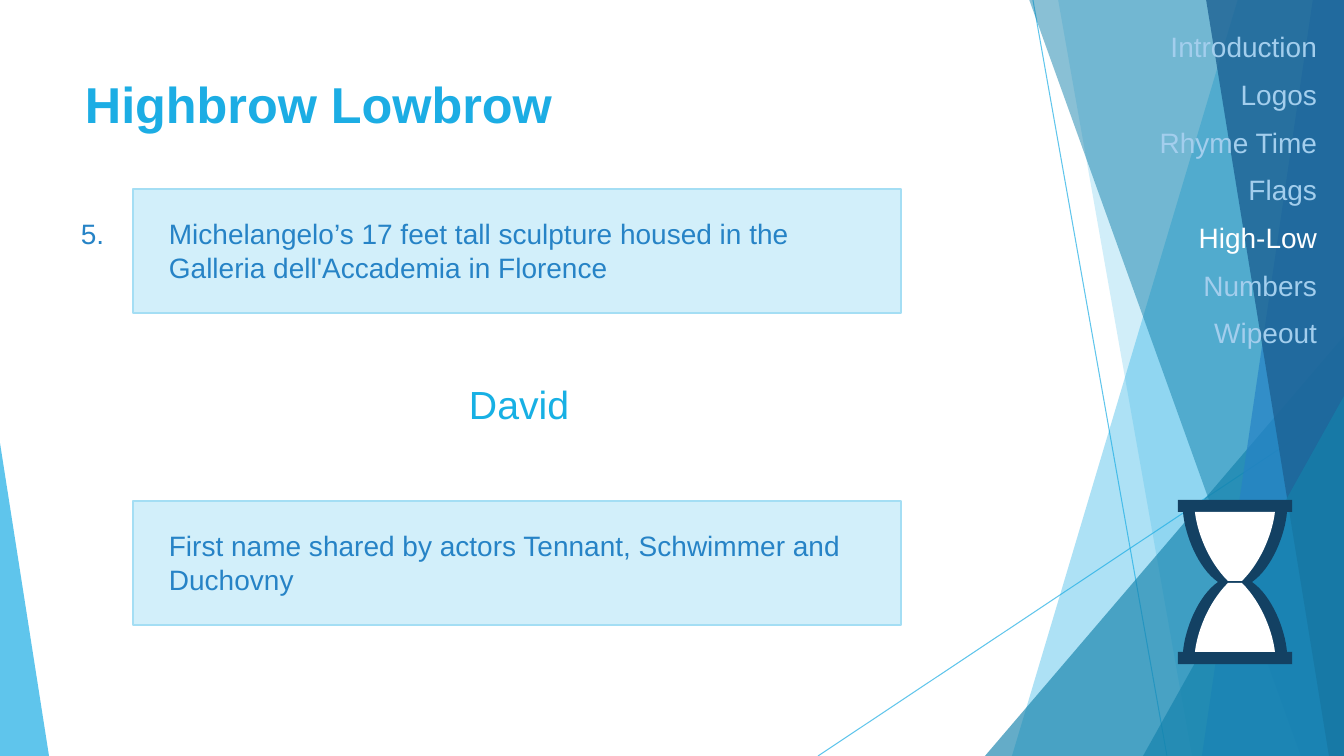
"""Build the Highbrow Lowbrow quiz slide with its round menu and hourglass."""
from lxml import etree
from pptx import Presentation
from pptx.dml.color import RGBColor
from pptx.enum.shapes import MSO_CONNECTOR, MSO_SHAPE as SHAPE
from pptx.enum.text import MSO_ANCHOR as ANCHOR, PP_ALIGN as ALIGN
from pptx.oxml.ns import qn
from pptx.util import Emu, Pt

WIDTH, HEIGHT = 1344, 756
SCALE = 914400 / 100.8
SKY, BLUE, TEAL, NAVY = "1CADE4", "2683C6", "1482AC", "134163"

TITLE = "Highbrow Lowbrow"
NUMBER = "5."
CLUES = [
    (189, "Michelangelo’s 17 feet tall sculpture housed in the Galleria dell'Accademia in Florence"),
    (501, "First name shared by actors Tennant, Schwimmer and Duchovny"),
]
ANSWER = "David"
ROUNDS = ["Introduction", "Logos", "Rhyme Time", "Flags", "High-Low", "Numbers", "Wipeout"]
CURRENT_ROUND = "High-Low"

RAYS = [((1033, 0), (1167, HEIGHT)), ((WIDTH, 406), (818, HEIGHT))]
# kind, geometry, colour, opacity
FACETS = [
    ("band", (1238, 1012), SKY, 36),
    ("band", (1058, 1192), SKY, 20),
    ("triangle", (985, 336, 359, 420, 1), TEAL, 66),
    ("band", (1029, 1301), TEAL, 50),
    ("band", (1313, 1202), BLUE, 70),
    ("band", (1206, 1329), "1D6294", 80),
    ("triangle", (1143, 396, 201, 360, 1), TEAL, 66),
    ("triangle", (0, 443, 49, 313, 0), SKY, 70),
]

HOURGLASS_CENTRE = (1235, 582)
CAP = [(-57, -82), (-57, -70)]
FRAME_CURVE = [(-52, -70), (-50, -47), (-37, -14), (-17, 0)]
GLASS_CURVE = [(-40, -70), (-38, -52), (-28, -22), (-7, -1)]


def px(length):
    return Emu(round(length * SCALE))


def colour(fill_owner, value, opacity=100):
    fill_owner.solid()
    fill_owner.fore_color.rgb = RGBColor.from_string(value)
    if opacity < 100:
        rgb = fill_owner._xPr.find(qn("a:solidFill")).find(qn("a:srgbClr"))
        etree.SubElement(rgb, qn("a:alpha")).set("val", str(opacity * 1000))


def paint(shape, fill, opacity=100, line=None):
    shape.shadow.inherit = False
    colour(shape.fill, fill, opacity)
    if line:
        colour(shape.line.fill, line)
        shape.line.width = Pt(1.5)
    else:
        shape.line.fill.background()


def outline(slide, contours, fill, opacity=100):
    scaled = [[(px(x), px(y)) for x, y in contour] for contour in contours]
    builder = slide.shapes.build_freeform(*scaled[0][0], scale=1.0)
    for index, contour in enumerate(scaled):
        if index:
            builder.move_to(*contour[0])
        builder.add_line_segments(contour[1:], close=True)
    paint(builder.convert_to_shape(), fill, opacity)


def add_text(slide, box, lines, size=20, hue=BLUE, bold=False, align=ALIGN.LEFT,
             anchor=ANCHOR.TOP, wrap=True, gap=0, highlight=None):
    frame = slide.shapes.add_textbox(*map(px, box)).text_frame
    frame.word_wrap = wrap
    frame.vertical_anchor = anchor
    for index, line in enumerate(lines):
        paragraph = frame.paragraphs[0] if index == 0 else frame.add_paragraph()
        paragraph.alignment = align
        if index:
            paragraph.space_before = Pt(gap)
        run = paragraph.add_run()
        run.text = line
        run.font.name, run.font.size, run.font.bold = "Arial", Pt(size), bold
        run.font.color.rgb = RGBColor.from_string("FFFFFF" if line == highlight else hue)


def add_ray(slide, start, end):
    ray = slide.shapes.add_connector(MSO_CONNECTOR.STRAIGHT, *map(px, start + end))
    ray.line.width = Pt(0.75)
    colour(ray.line.fill, SKY, 70)
    etree.SubElement(ray._element.spPr, qn("a:effectLst"))


def add_facet(slide, kind, geometry, fill, opacity):
    if kind == "band":
        top, bottom = geometry
        corners = [(top, -1), (WIDTH, -1), (WIDTH, HEIGHT), (bottom, HEIGHT)]
        outline(slide, [corners], fill, opacity)
    else:
        *box, apex = geometry
        triangle = slide.shapes.add_shape(SHAPE.ISOSCELES_TRIANGLE, *map(px, box))
        triangle.adjustments[0] = apex
        paint(triangle, fill, opacity)


def bezier(points, steps=16):
    weights = (1, 3, 3, 1)
    return [
        tuple(sum(w * (1 - t) ** (3 - k) * t ** k * point[axis]
                  for k, (w, point) in enumerate(zip(weights, points))) for axis in (0, 1))
        for t in (step / steps for step in range(steps + 1))
    ]


def mirror(points, across, down):
    return [(x * across, y * down) for x, y in points]


def add_hourglass(slide):
    def place(points):
        return [(HOURGLASS_CENTRE[0] + x, HOURGLASS_CENTRE[1] + y) for x, y in points]

    side = CAP + bezier(FRAME_CURVE)
    left = side + mirror(side[::-1], 1, -1)
    outline(slide, [place(left + mirror(left[::-1], -1, 1))], NAVY)
    wall = bezier(GLASS_CURVE)
    bulb = wall + mirror(wall[::-1], -1, 1)
    outline(slide, [place(bulb), place(mirror(bulb, 1, -1))], "FFFFFF")


def main():
    deck = Presentation()
    deck.slide_width, deck.slide_height = px(WIDTH), px(HEIGHT)
    slide = deck.slides.add_slide(deck.slide_layouts[6])
    for start, end in RAYS:
        add_ray(slide, start, end)
    for facet in FACETS:
        add_facet(slide, *facet)
    add_text(slide, (75, 68, 948, 145), [TITLE], size=36, hue=SKY, bold=True)
    for top, clue in CLUES:
        panel = slide.shapes.add_shape(SHAPE.RECTANGLE, *map(px, (133, top, 768, 124)))
        paint(panel, "D2EFFA", line="A4DEF4")
        add_text(slide, (159, top + 23, 719, 78), [clue])
    add_text(slide, (71, 212, 45, 44), [NUMBER], wrap=False)
    add_text(slide, (310, 370, 418, 67), [ANSWER], size=28, hue="17B0E4",
             align=ALIGN.CENTER, anchor=ANCHOR.MIDDLE)
    add_hourglass(slide)
    add_text(slide, (1064, 25, 263, 456), ROUNDS, hue="A3CEED", align=ALIGN.RIGHT,
             gap=10, highlight=CURRENT_ROUND)
    deck.save("out.pptx")


if __name__ == "__main__":
    main()
